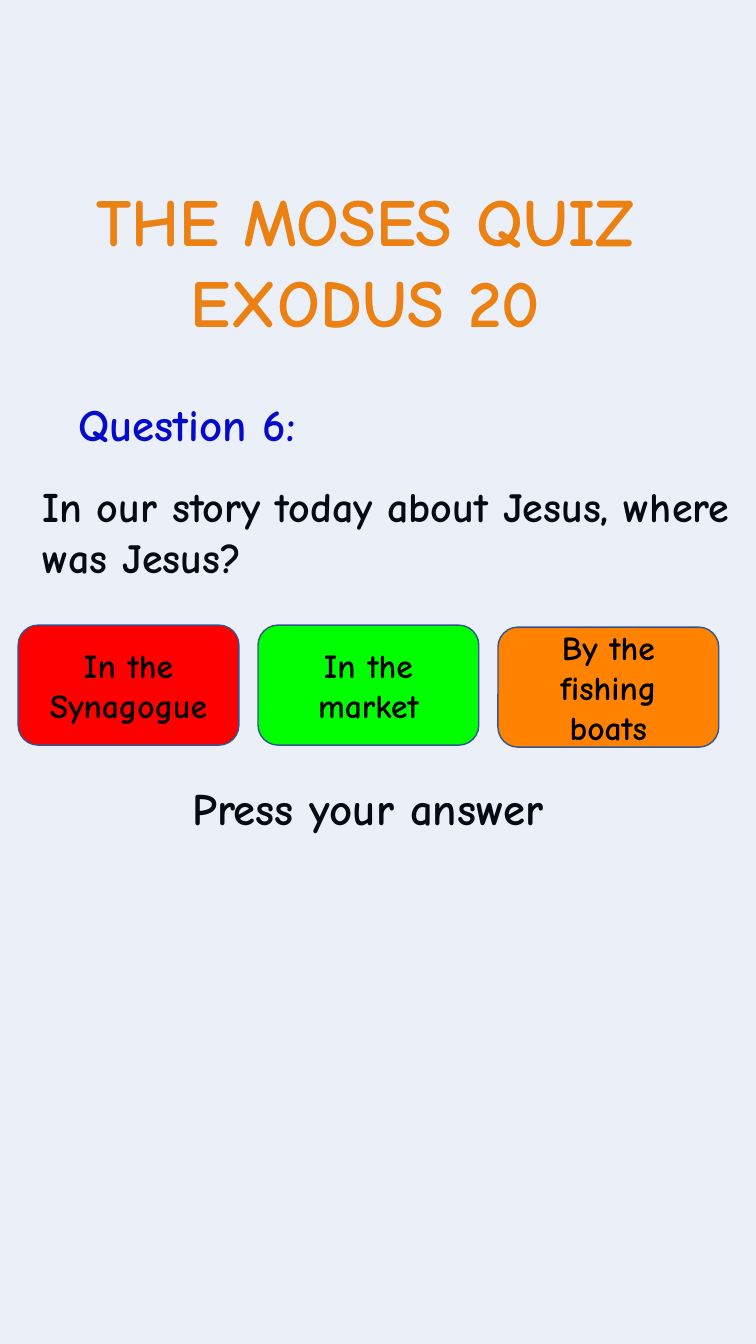
from lxml.etree import SubElement
from pptx import Presentation
from pptx.dml.color import RGBColor
from pptx.enum.shapes import MSO_SHAPE
from pptx.enum.text import MSO_ANCHOR, MSO_AUTO_SIZE, PP_ALIGN
from pptx.oxml.ns import qn
from pptx.util import Inches, Pt

FONT = "Comic Neue"
BLACK = RGBColor(0, 0, 0)
NAVY = RGBColor(0, 0, 0xCC)
ORANGE = RGBColor(0xFF, 0x82, 0)
RED = RGBColor(0xFF, 0, 0)
GREEN = RGBColor(0, 0xFF, 0)
BLUE = RGBColor(0x44, 0x72, 0xC4)
EDGE = RGBColor(0x32, 0x54, 0x91)


def write(shape, text, size, color=BLACK, align=PP_ALIGN.CENTER,
          anchor=MSO_ANCHOR.TOP, wrap=True):
    frame = shape.text_frame
    frame.text = text
    frame.word_wrap = wrap
    frame.auto_size = MSO_AUTO_SIZE.NONE
    frame.vertical_anchor = anchor
    for para in frame.paragraphs:
        para.alignment = align
        for run in para.runs:
            run.font.name = FONT
            run.font.size = Pt(size)
            run.font.bold = True
            run.font.color.rgb = color


def add_title(slide, text, box):
    title = slide.shapes.title
    title.left, title.top, title.width, title.height = map(Inches, box)
    write(title, text, 48, ORANGE, wrap=False)


def add_label(slide, text, box, size, color=BLACK, align=PP_ALIGN.LEFT,
              space=None, gap=0):
    label = slide.shapes.add_textbox(*map(Inches, box))
    write(label, text, size, color, align)
    para = label.text_frame.paragraphs[0]
    para.line_spacing = space
    para.space_before = Pt(gap)


def add_panel(slide, kind, box, color):
    panel = slide.shapes.add_shape(kind, *map(Inches, box))
    panel.shadow.inherit = False
    panel.fill.solid()
    panel.fill.fore_color.rgb = color
    panel.line.color.rgb = EDGE
    panel.line.width = Pt(1)
    return panel


def add_tint(slide, box):
    tint = add_panel(slide, MSO_SHAPE.RECTANGLE, box, BLUE)
    color = tint._element.spPr.find(qn("a:solidFill")).find(qn("a:srgbClr"))
    SubElement(color, qn("a:alpha"), val="10000")


def add_button(slide, text, left, top, color):
    box = (left, top, 2.19, 1.19)
    button = add_panel(slide, MSO_SHAPE.ROUNDED_RECTANGLE, box, color)
    write(button, text, 24, anchor=MSO_ANCHOR.MIDDLE)


def main():
    deck = Presentation()
    deck.slide_width = Inches(7.5)
    deck.slide_height = Inches(13.33)
    slide = deck.slides.add_slide(deck.slide_layouts[5])

    add_title(slide, "THE MOSES QUIZ\nEXODUS 20", (0.18, 1.73, 6.89, 1.72))
    add_label(slide, "Press your answer", (1.81, 7.75, 4.22, 0.72), 32,
              space=0.9, gap=7.5)
    add_label(slide, "In our story today about Jesus, where was Jesus?",
              (0.32, 4.72, 7.02, 1.19), 30, space=Pt(36), gap=7.5)
    add_label(slide, "Question 6:", (0.47, 3.89, 2.77, 0.64), 32, NAVY,
              PP_ALIGN.CENTER)
    add_tint(slide, (-0.38, -0.31, 8.16, 13.78))

    answers = [
        ("In the Synagogue", 6.2, RED),
        ("In the market", 6.2, GREEN),
        ("By the fishing\nboats", 6.22, ORANGE),
    ]
    for col, (text, top, color) in enumerate(answers):
        add_button(slide, text, 0.18 + 2.38 * col, top, color)

    deck.save("out.pptx")


if __name__ == "__main__":
    main()
